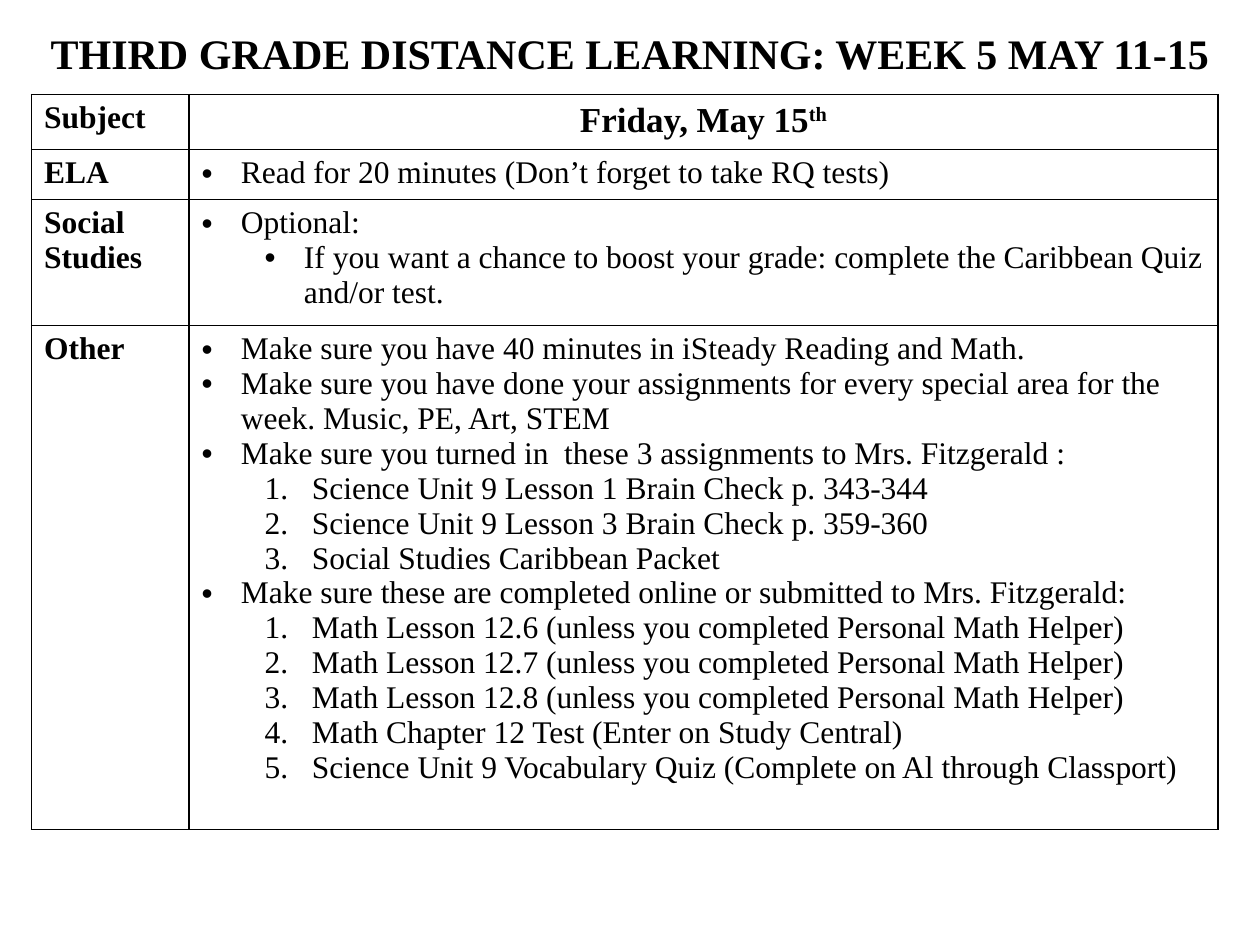
"""Build the weekly distance learning plan slide."""
from lxml.etree import SubElement
from pptx import Presentation
from pptx.dml.color import RGBColor
from pptx.enum.text import MSO_AUTO_SIZE, PP_ALIGN
from pptx.oxml.ns import qn
from pptx.util import Pt

BLACK = RGBColor(0, 0, 0)
WHITE = RGBColor(255, 255, 255)
FONT = "Times New Roman"
COLUMN_WIDTHS = [90, 588]
ROW_HEIGHTS = [31.4, 28.6, 72, 288]

BULLET, SUB_BULLET, NUMBER = "bullet", "sub-bullet", "number"
INDENTS = {BULLET: (0, 22.5, 22.5), SUB_BULLET: (1, 58.5, 22.5), NUMBER: (1, 63, 27)}
MATH_LESSON = "Math Lesson 12.{} (unless you completed Personal Math Helper)"
SUBJECTS = [
    ("ELA", [(BULLET, "Read for 20 minutes (Don’t forget to take RQ tests)")]),
    ("Social Studies", [
        (BULLET, "Optional:"),
        (SUB_BULLET, "If you want a chance to boost your grade: complete the "
                     "Caribbean Quiz and/or test."),
    ]),
    ("Other", [
        (BULLET, "Make sure you have 40 minutes in iSteady Reading and Math."),
        (BULLET, "Make sure you have done your assignments for every special area "
                 "for the week. Music, PE, Art, STEM"),
        (BULLET, "Make sure you turned in  these 3 assignments to Mrs. Fitzgerald :"),
        (NUMBER, "Science Unit 9 Lesson 1 Brain Check p. 343-344"),
        (NUMBER, "Science Unit 9 Lesson 3 Brain Check p. 359-360"),
        (NUMBER, "Social Studies Caribbean Packet"),
        (BULLET, "Make sure these are completed online or submitted to Mrs. Fitzgerald:"),
        *[(NUMBER, MATH_LESSON.format(lesson)) for lesson in (6, 7, 8)],
        (NUMBER, "Math Chapter 12 Test (Enter on Study Central)"),
        (NUMBER, "Science Unit 9 Vocabulary Quiz (Complete on Al through Classport)"),
    ]),
]


def write(paragraph, text, size=18, bold=False, align=None):
    paragraph.add_run().text = text
    paragraph.alignment = align
    font = paragraph.font
    font.name, font.size, font.bold = FONT, Pt(size), bold
    font.color.rgb = BLACK


def add_marker(paragraph, kind):
    level, margin, hanging = INDENTS[kind]
    paragraph.level = level
    properties = paragraph._p.get_or_add_pPr()
    properties.set("marL", str(Pt(margin)))
    properties.set("indent", str(-Pt(hanging)))
    if kind == NUMBER:
        SubElement(properties, qn("a:buFont"), typeface="+mj-lt")
        SubElement(properties, qn("a:buAutoNum"), type="arabicPeriod")
    else:
        SubElement(properties, qn("a:buFont"), typeface="Arial")
        SubElement(properties, qn("a:buChar"), char="•")


def write_list(frame, items):
    for index, (kind, text) in enumerate(items):
        paragraph = frame.add_paragraph() if index else frame.paragraphs[0]
        add_marker(paragraph, kind)
        write(paragraph, text)


def style_cell(cell):
    properties = cell._tc.get_or_add_tcPr()
    for side in ("lnL", "lnR", "lnT", "lnB"):
        line = SubElement(properties, qn(f"a:{side}"), w=str(Pt(1)))
        fill = SubElement(line, qn("a:solidFill"))
        SubElement(fill, qn("a:srgbClr"), val=str(BLACK))
    cell.fill.solid()
    cell.fill.fore_color.rgb = WHITE


def add_plan(page):
    table = page.shapes.add_table(
        len(ROW_HEIGHTS), len(COLUMN_WIDTHS), Pt(18), Pt(54),
        Pt(sum(COLUMN_WIDTHS)), Pt(sum(ROW_HEIGHTS))).table
    table.first_row = table.horz_banding = False
    for column, width in zip(table.columns, COLUMN_WIDTHS):
        column.width = Pt(width)
    for row, height in zip(table.rows, ROW_HEIGHTS):
        row.height = Pt(height)
    for cell in table.iter_cells():
        style_cell(cell)

    write(table.cell(0, 0).text_frame.paragraphs[0], "Subject", bold=True)
    day = table.cell(0, 1).text_frame.paragraphs[0]
    write(day, "Friday, May 15", 20, True, PP_ALIGN.CENTER)
    suffix = day.add_run()
    suffix.text = "th"
    suffix._r.get_or_add_rPr().set("baseline", "30000")

    for row, (subject, items) in enumerate(SUBJECTS, 1):
        write(table.cell(row, 0).text_frame.paragraphs[0], subject, bold=True)
        write_list(table.cell(row, 1).text_frame, items)


def add_title(page, text):
    box = page.shapes.add_textbox(Pt(0), Pt(12), Pt(720), Pt(36))
    frame = box.text_frame
    frame.word_wrap = True
    frame.auto_size = MSO_AUTO_SIZE.SHAPE_TO_FIT_TEXT
    write(frame.paragraphs[0], text, 24, True, PP_ALIGN.CENTER)


def main():
    deck = Presentation()
    deck.slide_width, deck.slide_height = Pt(720), Pt(540)
    page = deck.slides.add_slide(deck.slide_layouts[6])
    add_plan(page)
    add_title(page, "THIRD GRADE DISTANCE LEARNING: WEEK 5 MAY 11-15")
    deck.save("out.pptx")


if __name__ == "__main__":
    main()
